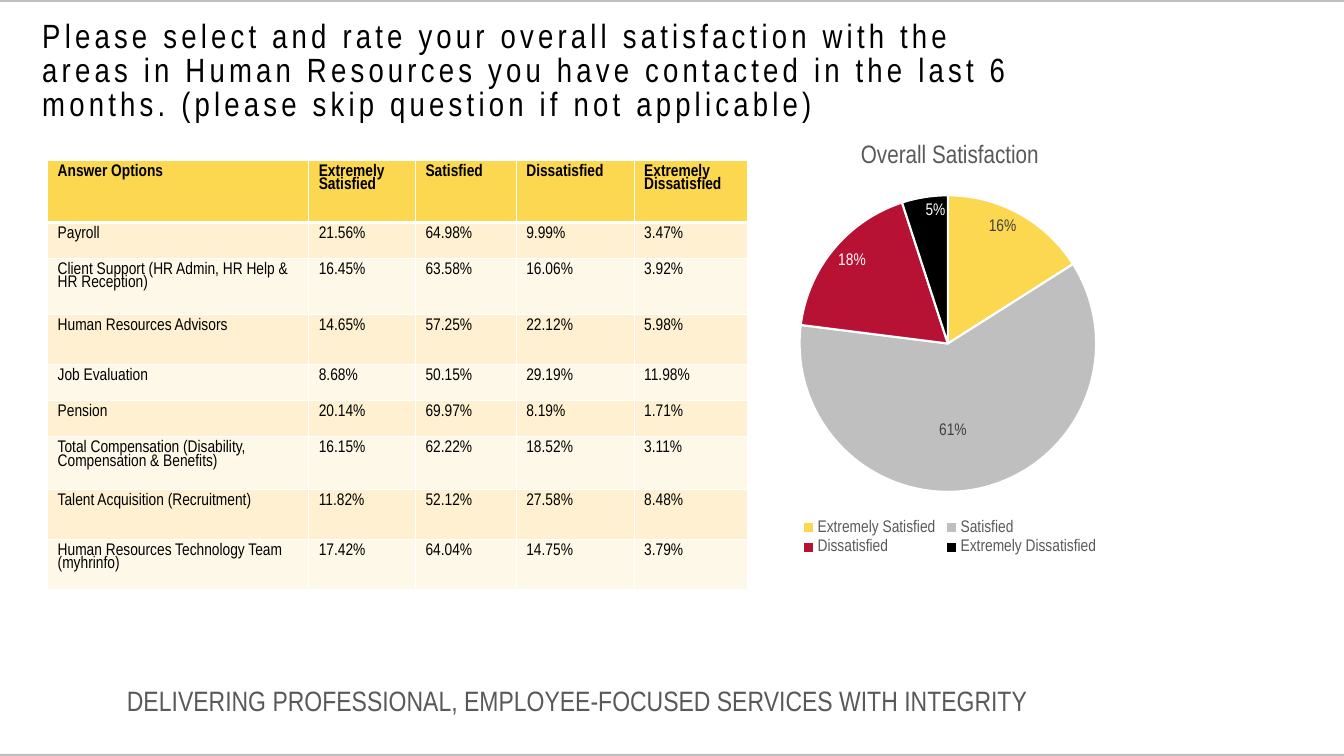
from lxml.etree import SubElement
from pptx import Presentation
from pptx.chart.data import CategoryChartData
from pptx.dml.color import RGBColor
from pptx.enum.chart import XL_CHART_TYPE, XL_LABEL_POSITION, XL_LEGEND_POSITION
from pptx.enum.shapes import MSO_SHAPE
from pptx.enum.text import MSO_ANCHOR, MSO_AUTO_SIZE, PP_ALIGN
from pptx.oxml import parse_xml
from pptx.oxml.ns import nsdecls, qn
from pptx.util import Cm, Pt

BLACK, WHITE, GREY, DARK = "000000", "FFFFFF", "BFBFBF", "595959"
YELLOW, RED, LABEL = "FCD750", "B71234", "404040"
BANDS = ("FEF0D0", "FEF8E9")

TITLE = ("Please select and rate your overall satisfaction with the areas in Human "
         "Resources you have contacted in the last 6 months. (please skip question "
         "if not applicable)")
RATINGS = ["Extremely Satisfied", "Satisfied", "Dissatisfied", "Extremely Dissatisfied"]
ROWS = [
    ["Answer Options"] + RATINGS,
    ["Payroll", "21.56%", "64.98%", "9.99%", "3.47%"],
    ["Client Support (HR Admin, HR Help & HR Reception)",
     "16.45%", "63.58%", "16.06%", "3.92%"],
    ["Human Resources Advisors", "14.65%", "57.25%", "22.12%", "5.98%"],
    ["Job Evaluation", "8.68%", "50.15%", "29.19%", "11.98%"],
    ["Pension", "20.14%", "69.97%", "8.19%", "1.71%"],
    ["Total Compensation (Disability, Compensation & Benefits)",
     "16.15%", "62.22%", "18.52%", "3.11%"],
    ["Talent Acquisition (Recruitment)", "11.82%", "52.12%", "27.58%", "8.48%"],
    ["Human Resources Technology Team (myhrinfo)",
     "17.42%", "64.04%", "14.75%", "3.79%"],
]
COL_WIDTHS = [6.58, 2.69, 2.54, 2.97, 2.87]
ROW_HEIGHTS = [1.57, 0.91, 1.4, 1.27, 0.91, 0.91, 1.32, 1.27, 1.27]


def rgb(value):
    return RGBColor.from_string(value)


def manual_layout(**settings):
    layout = parse_xml(f"<c:layout {nsdecls('c')}><c:manualLayout/></c:layout>")
    for name, value in settings.items():
        SubElement(layout[0], qn(f"c:{name}")).set("val", str(value))
    return layout


class SlideBuilder:
    font = "Arial Narrow"

    def __init__(self, s):
        self.s = s

    def style(self, font, size, color, bold=False):
        font.name, font.size, font.bold = self.font, Pt(size), bold
        font.color.rgb = rgb(color)

    def fill_text(self, tf, text, size, color, spacing, bold=False):
        tf.word_wrap = True
        p = tf.paragraphs[0]
        p.text = text
        p.alignment = PP_ALIGN.LEFT
        p.line_spacing = spacing
        self.style(p.font, size, color, bold)
        return p

    def bar(self, x, y, w, h, color):
        sp = self.s.shapes.add_shape(MSO_SHAPE.RECTANGLE, Cm(x), Cm(y), Cm(w), Cm(h))
        sp.shadow.inherit = False
        sp.fill.solid()
        sp.fill.fore_color.rgb = rgb(color)
        sp.line.fill.background()

    def title(self, text, x, y, w, h):
        sp = self.s.shapes.title
        sp.left, sp.top, sp.width, sp.height = Cm(x), Cm(y), Cm(w), Cm(h)
        tf = sp.text_frame
        tf.auto_size = MSO_AUTO_SIZE.NONE
        tf.vertical_anchor = MSO_ANCHOR.MIDDLE
        p = self.fill_text(tf, text, 24, BLACK, 0.85)
        p.runs[0]._r.get_or_add_rPr().set("spc", "300")

    def text(self, text, x, y, w, h, size, color):
        sp = self.s.shapes.add_textbox(Cm(x), Cm(y), Cm(w), Cm(h))
        self.fill_text(sp.text_frame, text, size, color, 0.9)

    def borders(self, cell, widths):
        tcPr = cell._tc.get_or_add_tcPr()
        for i, (side, width) in enumerate(widths.items()):
            tcPr.insert(i, parse_xml(
                f'<a:ln{side} {nsdecls("a")} w="{Pt(width)}"><a:solidFill>'
                f'<a:srgbClr val="{WHITE}"/></a:solidFill></a:ln{side}>'))

    def table(self, rows, x, y, widths, heights):
        table = self.s.shapes.add_table(
            len(rows), len(widths), Cm(x), Cm(y), Cm(sum(widths)), Cm(sum(heights))).table
        for column, width in zip(table.columns, widths):
            column.width = Cm(width)
        for i, (row, height) in enumerate(zip(rows, heights)):
            table.rows[i].height = Cm(height)
            for j, value in enumerate(row):
                cell = table.cell(i, j)
                self.fill_text(cell.text_frame, value, 12, BLACK, 0.85, bold=i == 0)
                cell.fill.solid()
                cell.fill.fore_color.rgb = rgb(BANDS[(i - 1) % 2] if i else YELLOW)
                self.borders(cell, {"L": 1, "R": 1, "T": 3 if i == 1 else 1,
                                    "B": 3 if i == 0 else 1})

    def pie(self, title, categories, values, slices, x, y, w, h):
        data = CategoryChartData()
        data.categories = categories
        data.add_series("Series 1", values)
        chart = self.s.shapes.add_chart(
            XL_CHART_TYPE.PIE, Cm(x), Cm(y), Cm(w), Cm(h), data).chart
        self.style(chart.font, 10, BLACK)
        chart.has_title = True
        p = chart.chart_title.text_frame.paragraphs[0]
        p.text = title
        self.style(p.font, 18, DARK)
        chart.has_legend = True
        chart.legend.position = XL_LEGEND_POSITION.BOTTOM
        chart.legend.include_in_layout = False
        self.style(chart.legend.font, 12, DARK)

        plot = chart.plots[0]
        plot.vary_by_categories = True
        series = plot.series[0]
        labels = series.data_labels
        labels.show_percentage, labels.show_value = True, False
        labels.number_format, labels.number_format_is_linked = "0%", False
        labels.position = XL_LABEL_POSITION.INSIDE_END
        self.style(labels.font, 12, LABEL)
        for i, (color, label_color) in enumerate(slices):
            point = series.points[i]
            point.format.fill.solid()
            point.format.fill.fore_color.rgb = rgb(color)
            point.format.line.color.rgb = rgb(WHITE)
            point.format.line.width = Pt(1.5)
            self.style(point.data_label.font, 12, label_color)
            point.data_label.position = XL_LABEL_POSITION.INSIDE_END

        for dLbl in labels._element.findall(qn("c:dLbl")):
            dLbl.find(qn("c:showVal")).set("val", "0")
            dLbl.find(qn("c:showPercent")).set("val", "1")
            if dLbl.find(qn("c:idx")).get("val") == "1":
                dLbl.insert(1, manual_layout(x=-0.03, y=-0.1))
        area = plot._element.getparent()
        for layout in area.findall(qn("c:layout")):
            area.remove(layout)
        area.insert(0, manual_layout(layoutTarget="inner", xMode="edge", yMode="edge",
                                     x=0.13, y=0.12, w=0.73, h=0.77))


def main():
    prs = Presentation()
    prs.slide_width, prs.slide_height = Cm(33.87), Cm(19.05)
    b = SlideBuilder(prs.slides.add_slide(prs.slide_layouts[5]))
    for y in (0, 19):
        b.bar(0, y, 33.87, 0.05, GREY)
    b.title(TITLE, 0.81, 0.48, 26.01, 2.67)
    b.pie("Overall Satisfaction", RATINGS, (16, 61, 18, 5),
          [(YELLOW, LABEL), (GREY, LABEL), (RED, WHITE), (BLACK, WHITE)],
          18.82, 3.12, 10.24, 10.97)
    b.table(ROWS, 1.2, 4.04, COL_WIDTHS, ROW_HEIGHTS)
    b.text("DELIVERING PROFESSIONAL, EMPLOYEE-FOCUSED SERVICES WITH INTEGRITY",
           2.95, 17.2, 24.36, 1.85, 20, DARK)
    prs.save("out.pptx")


if __name__ == "__main__":
    main()
